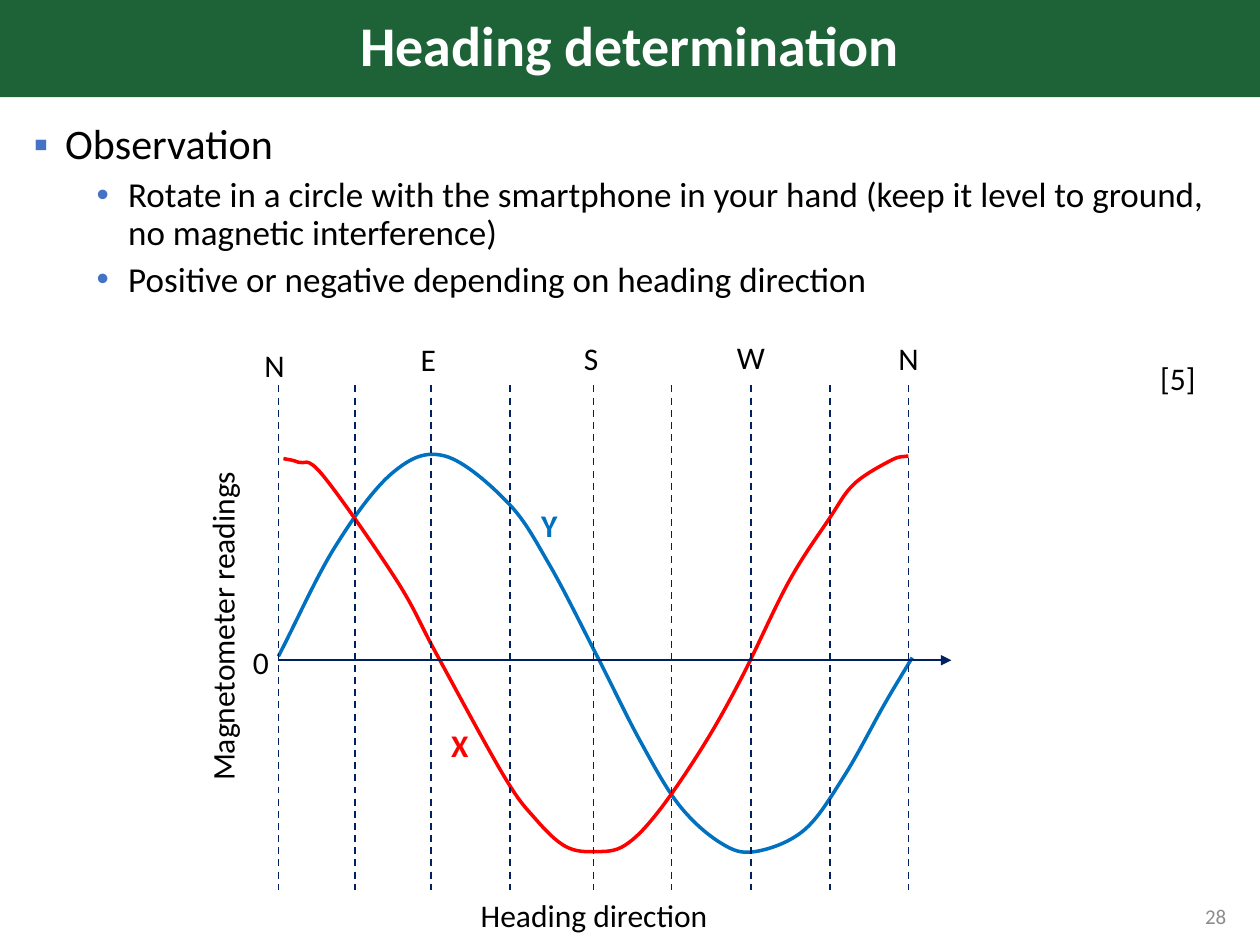
"""Build the heading determination slide with its magnetometer curves."""
from lxml.etree import SubElement
from pptx import Presentation
from pptx.dml.color import RGBColor
from pptx.enum.dml import MSO_LINE
from pptx.enum.shapes import MSO_CONNECTOR, MSO_SHAPE
from pptx.enum.text import MSO_ANCHOR, PP_ALIGN
from pptx.oxml.ns import qn
from pptx.util import Pt

COLORS = {
    "green": "1E6238", "white": "FFFFFF", "black": "000000", "bullet": "4472C4",
    "grey": "8C8C8C", "blue": "0070C0", "red": "FF0000", "navy": "002060",
}


def add_text(tf, p, text, size=18, color="black", bold=False, align=PP_ALIGN.CENTER):
    tf.word_wrap = True
    p.alignment = align
    r = p.add_run()
    r.text = text
    for name, value in {"name": "Calibri", "size": Pt(size), "bold": bold}.items():
        setattr(r.font, name, value)
    r.font.color.rgb = RGBColor.from_string(COLORS[color])


def add_line(shapes, x1, y1, x2, y2):
    sp = shapes.add_connector(MSO_CONNECTOR.STRAIGHT, Pt(x1), Pt(y1), Pt(x2), Pt(y2))
    sp.line.width = Pt(1)
    sp.line.color.rgb = RGBColor.from_string(COLORS["navy"])
    SubElement(sp._element.spPr, qn("a:effectLst"))
    return sp


prs = Presentation()
prs.slide_width, prs.slide_height = Pt(720), Pt(540)
s = prs.slides.add_slide(prs.slide_layouts[6])

sp = s.shapes.add_shape(MSO_SHAPE.RECTANGLE, 0, 0, Pt(720), Pt(55.5))
sp.shadow.inherit = False
sp.fill.solid()
sp.fill.fore_color.rgb = RGBColor.from_string(COLORS["green"])
sp.line.fill.background()
tf = sp.text_frame
tf.vertical_anchor = MSO_ANCHOR.MIDDLE
add_text(tf, tf.paragraphs[0], "Heading determination", 32, "white", True)
tf.paragraphs[0].line_spacing = 0.9

bullets = [
    ("Observation", 0, 24, 18, 10, "▪"),
    ("Rotate in a circle with the smartphone in your hand (keep it level to ground, "
     "no magnetic interference)", 1, 20, 54, 5, "•"),
    ("Positive or negative depending on heading direction", 1, 20, 54, 5, "•"),
]
tf = s.shapes.add_textbox(Pt(12.2), Pt(67), Pt(695.5), Pt(461.5)).text_frame
for i, (text, level, size, margin, before, char) in enumerate(bullets):
    p = tf.add_paragraph() if i else tf.paragraphs[0]
    add_text(tf, p, text, size, align=PP_ALIGN.LEFT)
    for name, value in {"level": level, "line_spacing": 0.9, "space_before": Pt(before)}.items():
        setattr(p, name, value)
    pPr = p._p.get_or_add_pPr()
    pPr.set("marL", str(Pt(margin)))
    pPr.set("indent", str(Pt(-18)))
    SubElement(SubElement(pPr, qn("a:buClr")), qn("a:srgbClr"), val=COLORS["bullet"])
    SubElement(pPr, qn("a:buFont"), typeface="Arial")
    SubElement(pPr, qn("a:buChar"), char=char)

curves = {
    "blue": [
        (159.1, 375.1), (191.5, 312.5), (224.6, 270), (254.2, 260.6), (290.2, 287.3),
        (313.9, 322.6), (341.3, 375.1), (365.8, 423.4), (388.1, 460.1), (411.8, 481.7),
        (431.3, 486.7), (459.4, 474.5), (482.4, 443.5), (505.4, 402.5), (521.3, 375.8),
    ],
    "red": [
        (162, 262.1), (170.6, 264.2), (184.3, 271.4), (226.8, 331.9), (249.8, 374.4),
        (288, 443.5), (306, 468), (323.3, 483.8), (340.6, 486.7), (357.1, 483.1),
        (375.8, 464.4), (401, 427.7), (423.4, 388.1), (450.7, 332.6), (473.8, 296.6),
        (488.2, 276.5), (509.8, 262.8), (519.1, 260.6),
    ],
}
for color, knots in curves.items():
    points = [(Pt(x), Pt(y)) for x, y in knots]
    fb = s.shapes.build_freeform(*points[0])
    fb.add_line_segments(points[1:], close=False)
    sp = fb.convert_to_shape()
    sp.shadow.inherit = False
    sp.fill.background()
    sp.line.width = Pt(2)
    sp.line.color.rgb = RGBColor.from_string(COLORS[color])
    local = [(int(pt.get("x")), int(pt.get("y"))) for pt in sp._element.xpath(".//a:pt")]
    ends = [tuple(2 * a - b for a, b in zip(local[i], local[j])) for i, j in ((0, 1), (-1, -2))]
    padded = [ends[0], *local, ends[1]]
    for i, seg in enumerate(sp._element.xpath(".//a:lnTo")):
        before, start, end, after = padded[i:i + 4]
        seg.tag = qn("a:cubicBezTo")
        controls = [
            [a + (c - b) / 6 for a, b, c in zip(start, before, end)],
            [a - (c - b) / 6 for a, b, c in zip(end, start, after)],
        ]
        for k, (x, y) in enumerate(controls):
            pt = SubElement(seg, qn("a:pt"), x=str(round(x)), y=str(round(y)))
            seg.insert(k, pt)

for x in (159.1, 203, 246.2, 291.6, 339.1, 383.8, 429.1, 474.5, 519.1):
    add_line(s.shapes, x, 220.3, x, 508.7).line.dash_style = MSO_LINE.DASH
axis = add_line(s.shapes, 159.1, 377.3, 543.6, 377.3)
SubElement(axis.line._get_or_add_ln(), qn("a:tailEnd"), type="triangle")

labels = [
    ("N", 134.6, 194.4, 44.6, {}),
    ("E", 222.5, 190.8, 44.6, {}),
    ("S", 315.4, 190.1, 44.6, {}),
    ("W", 406.8, 189.4, 44.6, {}),
    ("N", 496.8, 190.1, 44.6, {}),
    ("0", 126.7, 363.6, 44.6, {}),
    ("X", 240.5, 411.1, 44.6, {"color": "red", "bold": True}),
    ("Y", 291.6, 285.8, 44.6, {"color": "blue", "bold": True}),
    ("Heading direction", 226.8, 508.3, 225.4, {}),
    ("Magnetometer readings", -36.7, 343.4, 327.6, {}),
    ("[5]", 655.9, 201.6, 36, {"align": PP_ALIGN.LEFT}),
    ("28", 545.8, 509, 162, {"size": 12, "color": "grey", "align": PP_ALIGN.RIGHT}),
]
for text, x, y, width, style in labels:
    sp = s.shapes.add_textbox(Pt(x), Pt(y), Pt(width), Pt(29))
    tf = sp.text_frame
    add_text(tf, tf.paragraphs[0], text, **style)
    if text == "Magnetometer readings":
        sp.rotation = 270
    if text == "28":
        tf.vertical_anchor = MSO_ANCHOR.MIDDLE

prs.save("out.pptx")
